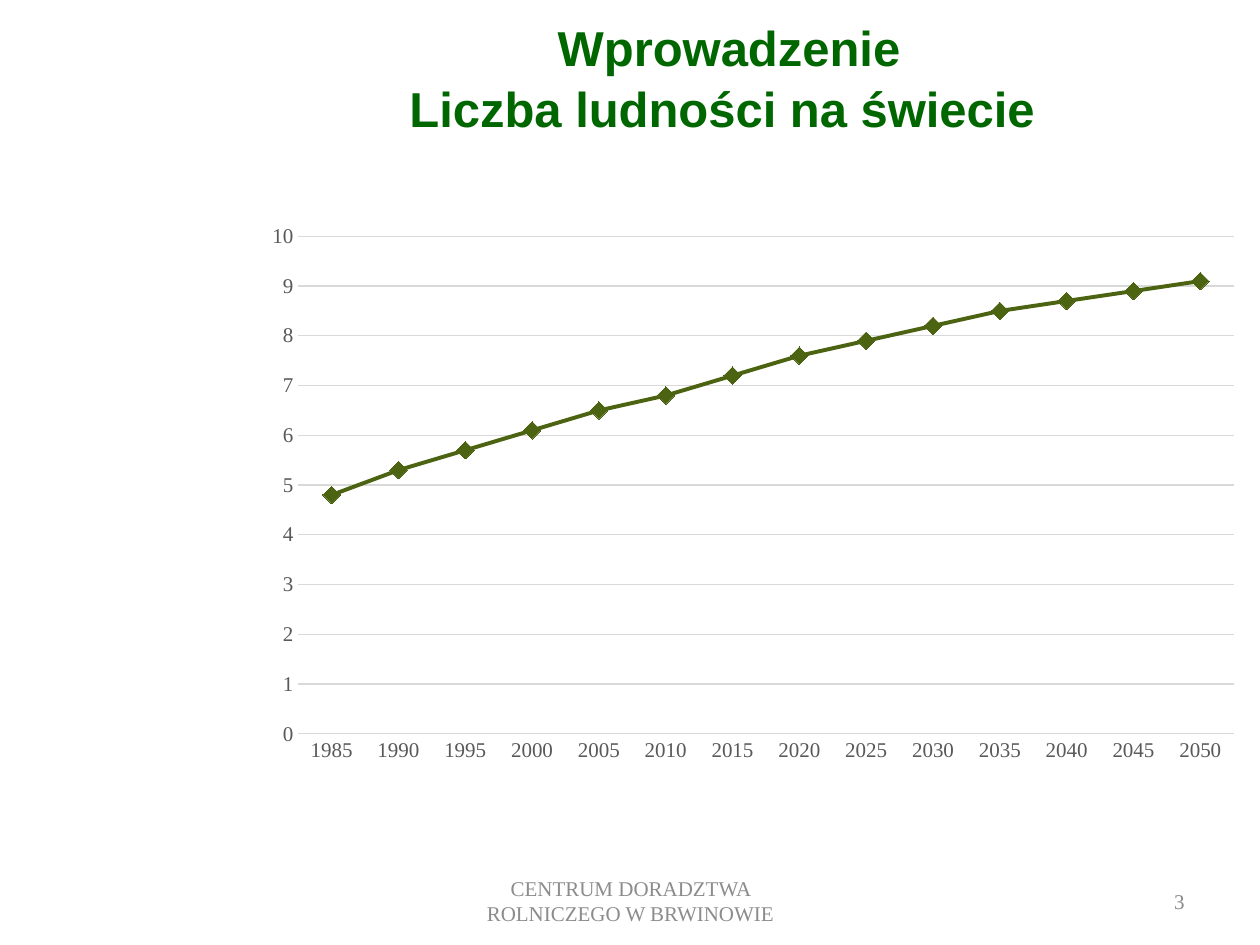
from copy import deepcopy

from lxml import etree
from pptx import Presentation
from pptx.chart.data import CategoryChartData
from pptx.dml.color import RGBColor
from pptx.enum.chart import XL_CHART_TYPE as ChartType, XL_MARKER_STYLE as Marker
from pptx.enum.chart import XL_TICK_MARK as Tick
from pptx.enum.text import MSO_ANCHOR as Anchor, PP_ALIGN as Align
from pptx.oxml.ns import qn
from pptx.util import Pt

EMU_PER_PX = 914400 / 126
GREEN = RGBColor(0x00, 0x66, 0x00)
OLIVE = RGBColor(0x4C, 0x63, 0x11)
FOOTER_GREY = RGBColor(0x8C, 0x8C, 0x8C)
NUMBER_GREY = RGBColor(0x89, 0x89, 0x89)
LABEL_GREY = RGBColor(0x59, 0x59, 0x59)
GRID_GREY = RGBColor(0xD9, 0xD9, 0xD9)
BLACK = RGBColor(0x00, 0x00, 0x00)
SANS, SERIF = "Arial", "Times New Roman"

YEARS = range(1985, 2051, 5)
POPULATION = [4.8, 5.3, 5.7, 6.1, 6.5, 6.8, 7.2, 7.6, 7.9, 8.2, 8.5, 8.7, 8.9, 9.1]


def px(*lengths):
    return [round(length * EMU_PER_PX) for length in lengths]


class SlideBuilder:
    def __init__(self, width, height):
        self.deck = Presentation()
        self.deck.slide_width, self.deck.slide_height = px(width, height)
        self.slide = self.deck.slides.add_slide(self.deck.slide_layouts[5])

    def style_font(self, font, name, size, color, bold=False):
        font.name, font.size, font.bold = name, Pt(size), bold
        font.color.rgb = color

    def fill_frame(self, frame, text, align, *style):
        frame.word_wrap = True
        frame.vertical_anchor = Anchor.MIDDLE
        frame.text = text
        paragraph = frame.paragraphs[0]
        paragraph.alignment = align
        for run in paragraph.runs:
            self.style_font(run.font, *style)
        return paragraph

    def title(self, box, text):
        heading = self.slide.shapes.title
        heading.left, heading.top, heading.width, heading.height = px(*box)
        paragraph = self.fill_frame(heading.text_frame, text, Align.CENTER,
                                    SANS, 28, GREEN, True)
        paragraph.line_spacing = 1.05
        # Line breaks take the size of the text around them
        run_style = paragraph.runs[0].font._element
        for line_break in paragraph._p.findall(qn("a:br")):
            line_break.append(deepcopy(run_style))

    def text(self, box, text, align, color):
        label = self.slide.shapes.add_textbox(*px(*box))
        self.fill_frame(label.text_frame, text, align, SERIF, 12, color)

    def axis(self, axis):
        axis.major_tick_mark = axis.minor_tick_mark = Tick.NONE
        self.style_font(axis.tick_labels.font, SERIF, 12, LABEL_GREY)

    def grid_line(self, line):
        line.color.rgb = GRID_GREY
        line.width = Pt(0.75)

    def place_plot(self, chart, **fractions):
        plot_area = chart._chartSpace.chart.plotArea
        for old in plot_area.findall(qn("c:layout")):
            plot_area.remove(old)
        layout = etree.Element(qn("c:layout"))
        manual = etree.SubElement(layout, qn("c:manualLayout"))
        settings = {"layoutTarget": "inner", "xMode": "edge", "yMode": "edge", **fractions}
        for tag, value in settings.items():
            etree.SubElement(manual, qn(f"c:{tag}")).set("val", str(value))
        plot_area.insert(0, layout)

    def line_chart(self, box, categories, name, values):
        data = CategoryChartData()
        data.categories = [str(category) for category in categories]
        data.add_series(name, values)
        chart = self.slide.shapes.add_chart(ChartType.LINE_MARKERS, *px(*box), data).chart
        chart.has_legend = chart.has_title = False
        self.style_font(chart.font, SERIF, 10, BLACK)
        self.place_plot(chart, x=0.05, y=0.04, w=0.93, h=0.89)

        # Axes and grid
        years, billions = chart.category_axis, chart.value_axis
        self.axis(years)
        self.axis(billions)
        self.grid_line(years.format.line)
        billions.format.line.fill.background()
        billions.has_major_gridlines = True
        self.grid_line(billions.major_gridlines.format.line)
        billions.minimum_scale, billions.maximum_scale, billions.major_unit = 0, 10, 1

        # Population curve
        chart.plots[0].vary_by_categories = False
        curve = chart.plots[0].series[0]
        curve.smooth = False
        curve.format.line.color.rgb = OLIVE
        curve.format.line.width = Pt(2.25)
        curve.marker.style, curve.marker.size = Marker.DIAMOND, 10
        curve.marker.format.fill.solid()
        curve.marker.format.fill.fore_color.rgb = OLIVE
        curve.marker.format.line.color.rgb = OLIVE


def main():
    builder = SlideBuilder(1260, 945)
    # Footer and slide number
    builder.text((431, 876, 399, 50), "CENTRUM DORADZTWA ROLNICZEGO W BRWINOWIE",
                 Align.CENTER, FOOTER_GREY)
    builder.text((903, 876, 294, 50), "3", Align.RIGHT, NUMBER_GREY)
    # Heading and chart
    builder.title((273, -4, 912, 160), "Wprowadzenie\vLiczba ludności na świecie ")
    builder.line_chart((248, 214, 1006, 559), YEARS, "Series 1", POPULATION)
    builder.deck.save("out.pptx")


if __name__ == "__main__":
    main()
